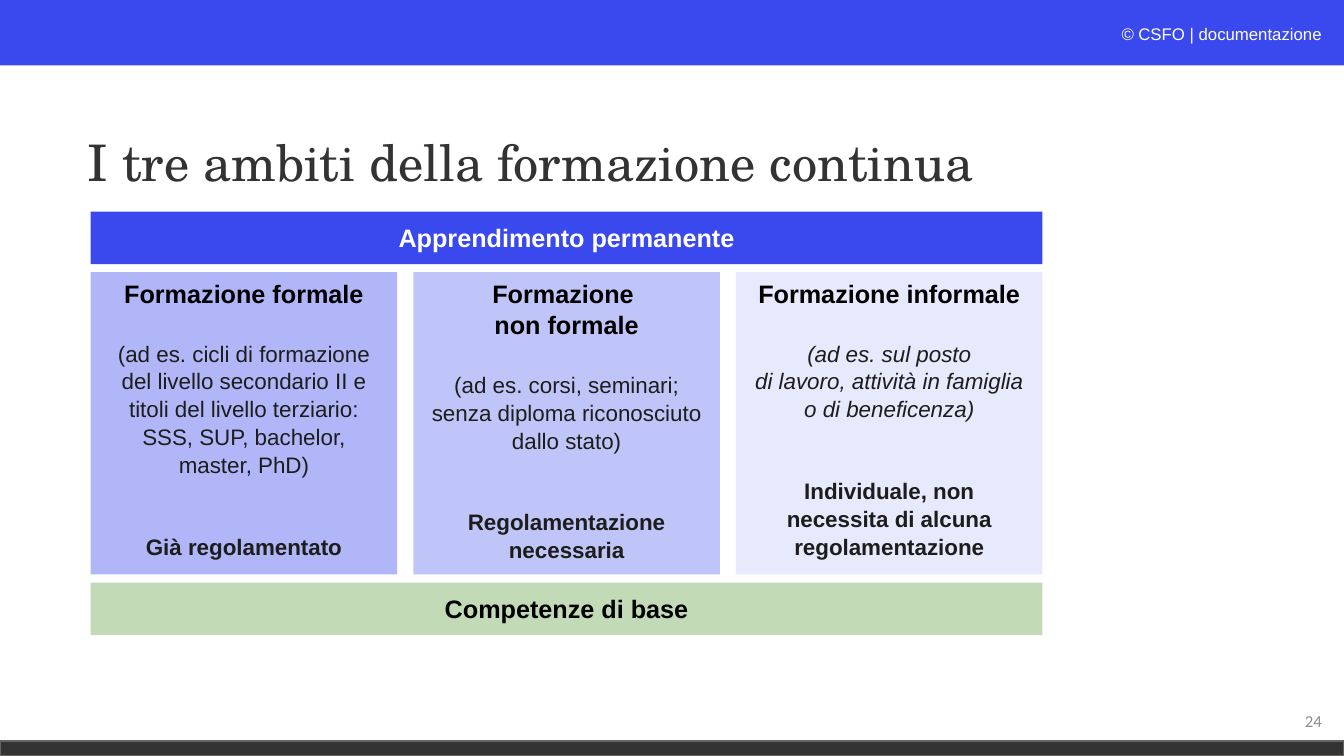
from dataclasses import dataclass

from pptx import Presentation
from pptx.dml.color import RGBColor
from pptx.enum.shapes import MSO_SHAPE
from pptx.enum.text import MSO_ANCHOR, PP_ALIGN
from pptx.util import Inches, Pt

RECT = MSO_SHAPE.RECTANGLE
TOP, MIDDLE = MSO_ANCHOR.TOP, MSO_ANCHOR.MIDDLE
LEFT, CENTER, RIGHT = PP_ALIGN.LEFT, PP_ALIGN.CENTER, PP_ALIGN.RIGHT

COLORS = {
    "blue": "3A49EE", "dark": "333333", "edge": "666360",
    "formal": "B0B6F8", "nonformal": "C0C5F9", "informal": "E7E9FD",
    "green": "C2DAB6", "white": "FFFFFF", "black": "000000",
    "body": "1D1D1B", "number": "8C8C8C", "copyright": "FCFDFE",
}
SLIDE_W, SLIDE_H = 13.33, 7.5
GRID_LEFT, GRID_W = 0.9, 9.44
COLUMN_W, COLUMN_TOP, COLUMN_H = 3.04, 2.7, 3
COLUMN_PITCH = (GRID_W - COLUMN_W) / 2
BAR_H, ROW_GAP = 0.52, 0.08
COLUMN_SPACING = 1.04
HEADING_GAP, STATUS_GAP = 21.5, 38.2


@dataclass
class Style:
    size: float
    color: str
    font: str = "Arial"
    bold: bool = False
    italic: bool = False


@dataclass
class Bar:
    text: str
    top: float
    fill: str
    color: str


@dataclass
class Column:
    fill: str
    heading: list[str]
    examples: list[str]
    status: list[str]
    italic: bool = False


BARS = [
    Bar("Apprendimento permanente", COLUMN_TOP - ROW_GAP - BAR_H, "blue", "white"),
    Bar("Competenze di base", COLUMN_TOP + COLUMN_H + ROW_GAP, "green", "black"),
]
COLUMNS = [
    Column("formal", ["Formazione formale"],
           ["(ad es. cicli di formazione",
            "del livello secondario II e titoli del livello terziario:",
            "SSS, SUP, bachelor,", "master, PhD)"],
           ["Già regolamentato"]),
    Column("nonformal", ["Formazione ", "non formale"],
           ["(ad es. corsi, seminari;", "senza diploma riconosciuto",
            "dallo stato)"],
           ["Regolamentazione", "necessaria"]),
    Column("informal", ["Formazione informale"],
           ["(ad es. sul posto", "di lavoro, attività in famiglia",
            "o di beneficenza)"],
           ["Individuale, non", "necessita di alcuna", "regolamentazione"],
           italic=True),
]


def rgb(name: str) -> RGBColor:
    return RGBColor.from_string(COLORS[name])


def add_rect(s, left: float, top: float, width: float, height: float, fill: str):
    sp = s.shapes.add_shape(RECT, Inches(left), Inches(top),
                            Inches(width), Inches(height))
    sp.shadow.inherit = False
    sp.fill.solid()
    sp.fill.fore_color.rgb = rgb(fill)
    sp.line.fill.background()
    return sp


def set_frame(sp, anchor, align):
    tf = sp.text_frame
    tf.word_wrap = True
    tf.vertical_anchor = anchor
    tf.paragraphs[0].alignment = align
    return tf


def add_run(p, text: str, style: Style) -> None:
    r = p.add_run()
    r.text = text
    r.font.name = style.font
    r.font.size = Pt(style.size)
    r.font.bold = style.bold
    r.font.italic = style.italic
    r.font.color.rgb = rgb(style.color)


def add_label(s, left: float, top: float, width: float, height: float,
              anchor, align, runs: list[tuple[str, Style]]):
    sp = s.shapes.add_textbox(Inches(left), Inches(top),
                              Inches(width), Inches(height))
    p = set_frame(sp, anchor, align).paragraphs[0]
    for text, style in runs:
        add_run(p, text, style)
    return p


def add_bar(s, bar: Bar) -> None:
    sp = add_rect(s, GRID_LEFT, bar.top, GRID_W, BAR_H, bar.fill)
    p = set_frame(sp, MIDDLE, CENTER).paragraphs[0]
    add_run(p, bar.text, Style(18, bar.color, bold=True))


def add_column(s, index: int, column: Column) -> None:
    sp = add_rect(s, GRID_LEFT + index * COLUMN_PITCH, COLUMN_TOP,
                  COLUMN_W, COLUMN_H, column.fill)
    tf = set_frame(sp, TOP, CENTER)
    groups = [
        (column.heading, Style(18, "black", bold=True), 0),
        (column.examples, Style(16, "body", italic=column.italic), HEADING_GAP),
        (column.status, Style(16, "body", bold=True), STATUS_GAP),
    ]
    p = tf.paragraphs[0]
    for lines, style, gap in groups:
        for i, line in enumerate(lines):
            if p.runs:
                p = tf.add_paragraph()
            p.alignment = CENTER
            p.line_spacing = COLUMN_SPACING
            if gap and i == 0:
                p.space_before = Pt(gap)
            add_run(p, line, style)


def main() -> None:
    prs = Presentation()
    prs.slide_width, prs.slide_height = Inches(SLIDE_W), Inches(SLIDE_H)
    s = prs.slides.add_slide(prs.slide_layouts[6])

    add_rect(s, 0, 0, SLIDE_W, 0.65, "blue")
    footer = add_rect(s, 0, 7.35, SLIDE_W, 0.15, "dark")
    footer.line.color.rgb = rgb("edge")
    footer.line.width = Pt(1)

    add_label(s, 8.62, 0.19, 4.59, 0.3, TOP, RIGHT,
              [("© ", Style(12, "copyright", italic=True)),
               ("CSFO | documentazione", Style(12, "white"))])
    add_label(s, 10.21, 6.95, 3, 0.4, MIDDLE, RIGHT,
              [("24", Style(12, "number", "Calibri"))])
    title = add_label(s, 0.77, 0.91, 11.33, 1.45, MIDDLE, LEFT,
                      [("I tre ambiti della formazione continua",
                        Style(36, "dark", "TeX Gyre Schola"))])
    title.line_spacing = 0.9

    for bar in BARS:
        add_bar(s, bar)
    for index, column in enumerate(COLUMNS):
        add_column(s, index, column)
    prs.save("out.pptx")


if __name__ == "__main__":
    main()
